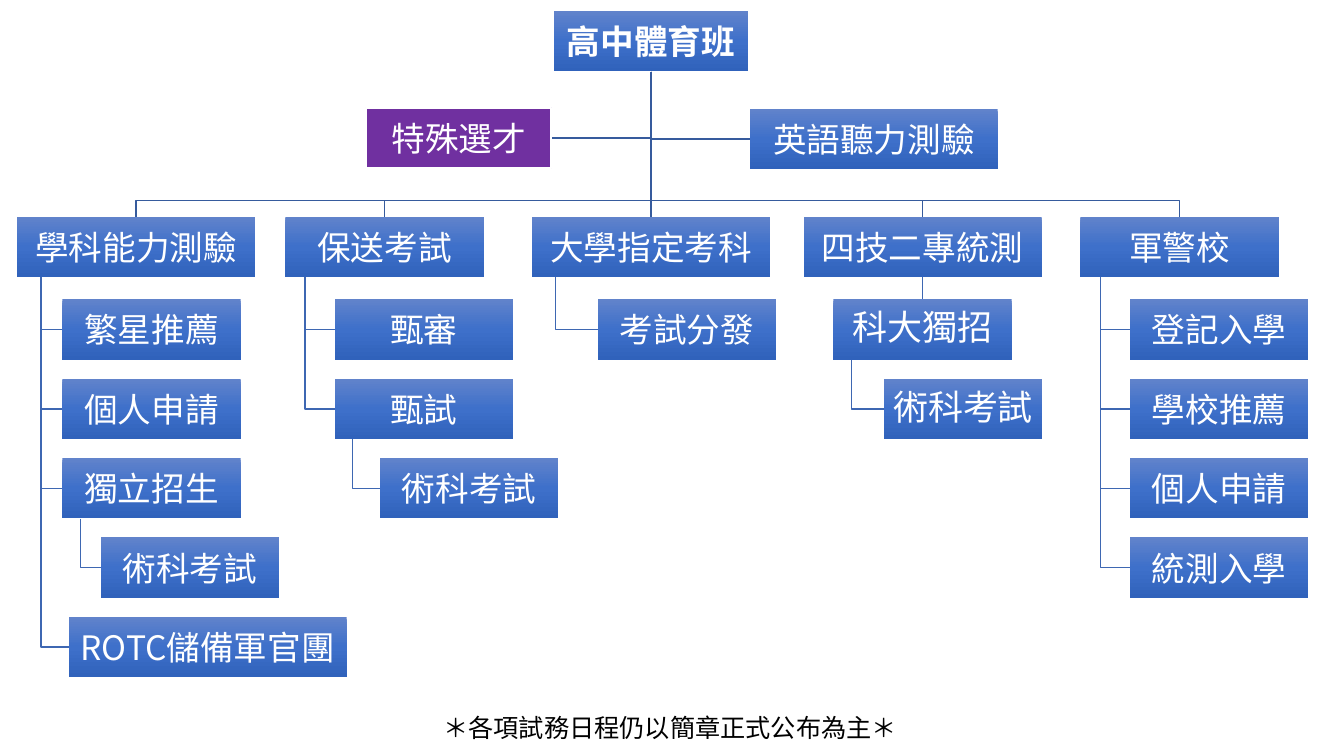
from dataclasses import dataclass
from typing import Any, Iterator

from lxml.etree import SubElement as Sub
from pptx import Presentation
from pptx.dml.color import RGBColor as Rgb
from pptx.enum.shapes import MSO_CONNECTOR as Conn, MSO_SHAPE as Form
from pptx.enum.text import MSO_ANCHOR as Anchor, PP_ALIGN as Align
from pptx.oxml import parse_xml as make
from pptx.oxml.ns import nsdecls, qn
from pptx.util import Pt


@dataclass(frozen=True)
class Theme:
    stops: tuple = ((0, "6183CB"), (50, "3E70CA"), (100, "3062BB"))
    trunk: str = "365B9D"
    twig: str = "3E67B2"
    accent: str = "7030A0"
    light: str = "FFFFFF"
    dark: str = "000000"
    trad: str = "Noto Sans CJK TC"
    simple: str = "Noto Sans CJK SC"
    plain: str = "Calibri"
    size: float = 24
    large: float = 25
    small: float = 18


LOOK = Theme()
HIGH = 43.2  # height of every box
MID = 93.0   # normal width of a level-two box
HEAD = 154.8
BUS = 143.3
WIDE, BASE = 170.0, 127.4


@dataclass(frozen=True)
class Node:
    text: str
    left: float
    top: float
    width: float = BASE
    kids: tuple["Node", ...] = ()
    font: str = LOOK.trad
    size: float = LOOK.size
    bold: bool = False
    fill: str = ""

    @property
    def axis(self) -> float:
        return self.left + self.width / 2

    @property
    def foot(self) -> float:
        return self.top + HIGH

    @property
    def level(self) -> float:
        return self.top + HIGH / 2


def row(index: int) -> float:
    return 213.8 + 56.7 * index


def walk(node: Node) -> Iterator[Node]:
    yield node
    for kid in node.kids:
        yield from walk(kid)


# Content of the tree
SKILL, ALONE = "術科考試", "個人申請"
SIDES = (
    Node("特殊選才", 261.4, 77, 132.5, fill=LOOK.accent),
    Node("英語聽力測驗", 535.7, 77.8, 177, font=LOOK.simple),
)
ROOT = Node("高中體育班", 395.5, 7.9, 139, bold=True, kids=(
    Node("學科能力測驗", 12.2, HEAD, WIDE, (
        Node("繁星推薦", 44.6, row(0)),
        Node(ALONE, 44.6, row(1)),
        Node("獨立招生", 44.6, row(2), kids=(
            Node(SKILL, 72, row(3), font=LOOK.plain),)),
        Node("ROTC儲備軍官團", 49, row(4), 198.7))),
    Node("保送考試", 203.8, HEAD, 141.8, (
        Node("甄審", 239, row(0)),
        Node("甄試", 239, row(1), kids=(
            Node(SKILL, 271.4, row(2), font=LOOK.plain),)))),
    Node("大學指定考科", 380, HEAD, WIDE, (
        Node("考試分發", 427, row(0)),)),
    Node("四技二專統測", 574, HEAD, WIDE, (
        Node("科大獨招", 595.3, row(0), size=LOOK.large, kids=(
            Node(SKILL, 631.4, row(1), 113, font=LOOK.plain,
                 size=LOOK.large),)),)),
    Node("軍警校", 771.8, HEAD, 141.8, tuple(
        Node(text, 807.1, row(i), font=LOOK.plain)
        for i, text in enumerate(("登記入學", "學校推薦", ALONE, "統測入學")))),
))


def put(item: Any, style: dict[str, Any]) -> None:
    for key, value in style.items():
        setattr(item, key, value)


def write(para: Any, text: str, font: str, size: float, tint: str,
          bold: bool = False) -> None:
    run = para.add_run()
    run.text = text
    put(run.font, {"name": font, "size": Pt(size), "bold": bold})
    run.font.color.rgb = Rgb.from_string(tint)
    Sub(run.font._element, qn("a:ea"), typeface=font)


def box(slide: Any, node: Node) -> Any:
    shape = slide.shapes.add_shape(
        Form.RECTANGLE, Pt(node.left), Pt(node.top), Pt(node.width), Pt(HIGH))
    shape.shadow.inherit = False
    if node.fill:
        shape.fill.solid()
        shape.fill.fore_color.rgb = Rgb.from_string(node.fill)
        shape.line.color.rgb = Rgb.from_string(LOOK.light)
        shape.line.width = Pt(1.5)
    else:
        shape.line.fill.background()
        stops = "".join(
            f'<a:gs pos="{at * 1000}"><a:srgbClr val="{tint}"/></a:gs>'
            for at, tint in LOOK.stops)
        shape.element.spPr.insert(2, make(
            f'<a:gradFill {nsdecls("a")} rotWithShape="1"><a:gsLst>{stops}'
            '</a:gsLst><a:lin ang="5400000" scaled="0"/></a:gradFill>'))
    frame = shape.text_frame
    put(frame, {"word_wrap": True, "vertical_anchor": Anchor.MIDDLE}
        | {f"margin_{side}": Pt(1.2)
           for side in ("left", "right", "top", "bottom")})
    para = frame.paragraphs[0]
    if node.size == LOOK.large:
        gaps = {"line_spacing": 0.9, "space_after": Pt(8.75)}
    else:
        gaps = {"line_spacing": Pt(28.8)}
    put(para, {"alignment": Align.CENTER} | gaps)
    write(para, node.text, node.font, node.size, LOOK.light, node.bold)
    return shape


def bend(slide: Any, tint: str, *dots: tuple[float, float]) -> None:
    first, *rest = [(Pt(x), Pt(y)) for x, y in dots]
    pen = slide.shapes.build_freeform(*first)
    pen.add_line_segments(rest, close=False)
    shape = pen.convert_to_shape()
    shape.shadow.inherit = False
    shape.fill.background()
    shape.line.color.rgb = Rgb.from_string(tint)
    shape.line.width = Pt(1)


def drop(slide: Any, tint: str, upper: Any, lower: Any) -> None:
    line = slide.shapes.add_connector(Conn.STRAIGHT, 0, 0, 0, 0)
    line.begin_connect(upper, 2)
    line.end_connect(lower, 0)
    line.line.color.rgb = Rgb.from_string(tint)
    line.line.width = Pt(1)
    Sub(line.element.spPr, qn("a:effectLst"))


def main() -> None:
    deck = Presentation()
    put(deck, {"slide_width": Pt(960), "slide_height": Pt(540)})
    slide = deck.slides.add_slide(deck.slide_layouts[6])
    nodes = list(walk(ROOT))
    pairs = [(node, kid) for node in nodes for kid in node.kids]

    # Bent lines, behind the boxes
    for side in SIDES:
        edge = side.left if side.left > ROOT.axis else side.left + side.width
        bend(slide, LOOK.trunk, (ROOT.axis, ROOT.foot),
             (ROOT.axis, side.level), (edge, side.level))
    for node, kid in pairs:
        if node.axis == kid.axis:
            continue
        if node is ROOT:
            bend(slide, LOOK.trunk, (node.axis, node.foot), (node.axis, BUS),
                 (kid.axis, BUS), (kid.axis, kid.top))
        else:
            spine = node.left + node.width / 10
            bend(slide, LOOK.twig, (spine, node.foot), (spine, kid.level),
                 (kid.left, kid.level))

    # Boxes
    shapes = {id(node): box(slide, node) for node in (*nodes, *SIDES)}

    # Straight lines between boxes on one axis
    for node, kid in pairs:
        if node.axis == kid.axis:
            tint = LOOK.trunk if node is ROOT else LOOK.twig
            drop(slide, tint, shapes[id(node)], shapes[id(kid)])

    # Footnote
    note = slide.shapes.add_textbox(Pt(309.6), Pt(505.4), Pt(340), Pt(28))
    note.text_frame.word_wrap = True
    write(note.text_frame.paragraphs[0], "＊各項試務日程仍以簡章正式公布為主＊",
          LOOK.plain, LOOK.small, LOOK.dark)

    deck.save("out.pptx")


if __name__ == "__main__":
    main()
